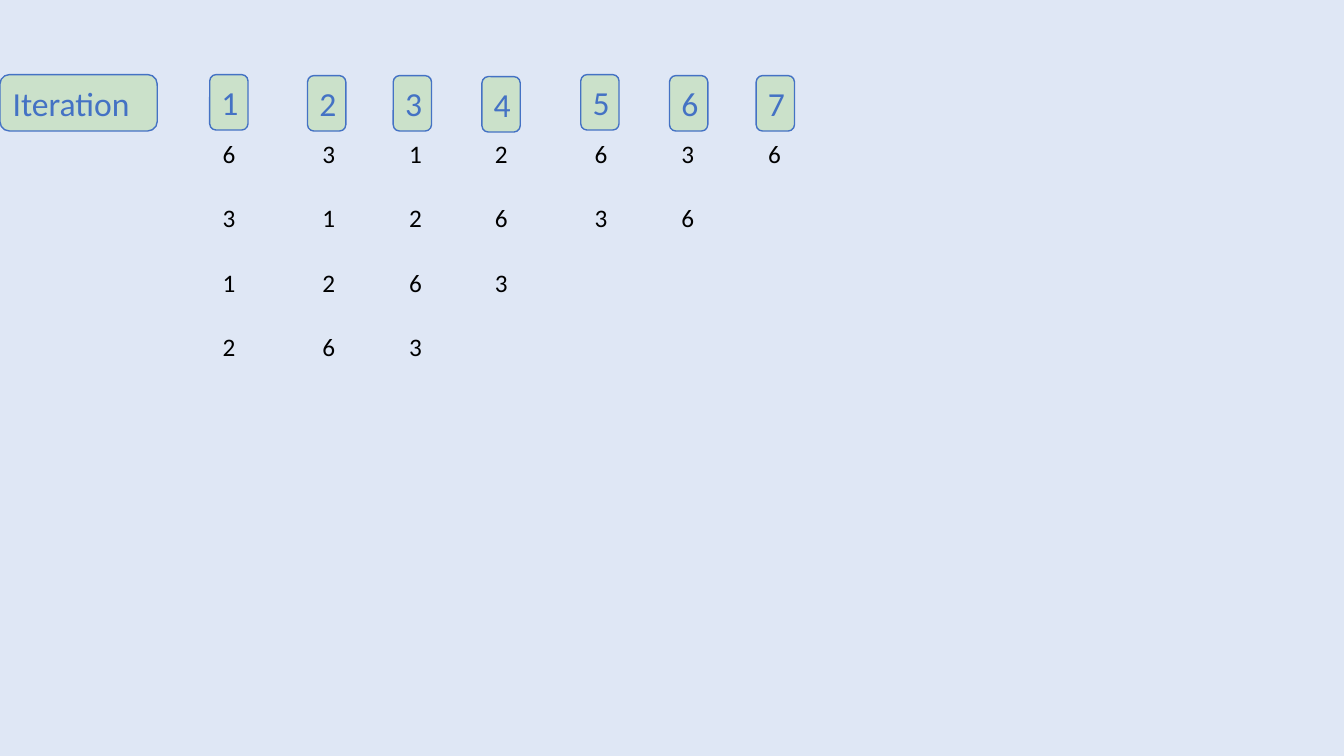
from dataclasses import dataclass

from lxml import etree
from pptx import Presentation
from pptx import util as u
from pptx.dml.color import RGBColor
from pptx.enum import shapes, text
from pptx.oxml import ns


@dataclass(frozen=True)
class Theme:
    background: RGBColor = RGBColor(0xDF, 0xE7, 0xF5)
    accent: RGBColor = RGBColor(0x44, 0x72, 0xC4)
    label_fill: RGBColor = RGBColor(0x92, 0xD0, 0x50)
    label_opacity: int = 26
    digit: RGBColor = RGBColor(0, 0, 0)
    font: str = "Calibri"
    label_size: int = 24
    digit_size: int = 18


theme = Theme()


def write(shape, content, size, color, frame_format):
    for name, value in frame_format.items():
        setattr(shape.text_frame, name, value)
    paragraph = shape.text_frame.paragraphs[0]
    paragraph.alignment = text.PP_ALIGN.LEFT
    run = paragraph.add_run()
    run.text = content
    font_format = {"name": theme.font, "size": u.Pt(size)}
    for name, value in font_format.items():
        setattr(run.font, name, value)
    run.font.color.rgb = color


def add_label(slide, content, left, top, width, height):
    shape = slide.shapes.add_shape(
        shapes.MSO_SHAPE.ROUNDED_RECTANGLE,
        u.Inches(left), u.Inches(top), u.Inches(width), u.Inches(height))
    shape.shadow.inherit = False
    shape.fill.solid()
    shape.fill.fore_color.rgb = theme.label_fill
    # Make the fill translucent
    fill_color = shape.fill._xPr.find(".//" + ns.qn("a:srgbClr"))
    etree.SubElement(fill_color, ns.qn("a:alpha"), val=str(theme.label_opacity * 1000))
    shape.line.color.rgb = theme.accent
    shape.line.width = u.Pt(1)
    write(shape, content, theme.label_size, theme.accent, {
        "word_wrap": True,
        "auto_size": text.MSO_AUTO_SIZE.SHAPE_TO_FIT_TEXT,
        "vertical_anchor": text.MSO_ANCHOR.MIDDLE,
    })


presentation = Presentation()
presentation.slide_width = u.Inches(13.33)
presentation.slide_height = u.Inches(7.5)
slide = presentation.slides.add_slide(presentation.slide_layouts[6])
slide.background.fill.solid()
slide.background.fill.fore_color.rgb = theme.background

# Row heading
add_label(slide, "Iteration", 0, 0.74, 1.56, 0.56)

# Iterations: label left, label top, digits left, queue from front to back
iterations = [
    (2.08, 0.74, 2.11, "6312"),
    (3.05, 0.75, 3.10, "3126"),
    (3.90, 0.75, 3.96, "1263"),
    (4.78, 0.76, 4.81, "263"),
    (5.76, 0.74, 5.80, "63"),
    (6.64, 0.75, 6.66, "36"),
    (7.50, 0.75, 7.52, "6"),
]
first_row, row_step = 1.32, 0.64

for number, (label_left, label_top, digit_left, queue) in enumerate(iterations, 1):
    add_label(slide, str(number), label_left, label_top, 0.38, 0.55)
    # Queue contents below the label
    for row, digit in enumerate(queue):
        box = slide.shapes.add_textbox(
            u.Inches(digit_left), u.Inches(first_row + row * row_step),
            u.Inches(0.33), u.Inches(0.4))
        write(box, digit, theme.digit_size, theme.digit, {
            "word_wrap": False,
            "auto_size": text.MSO_AUTO_SIZE.SHAPE_TO_FIT_TEXT,
        })

presentation.save("out.pptx")
